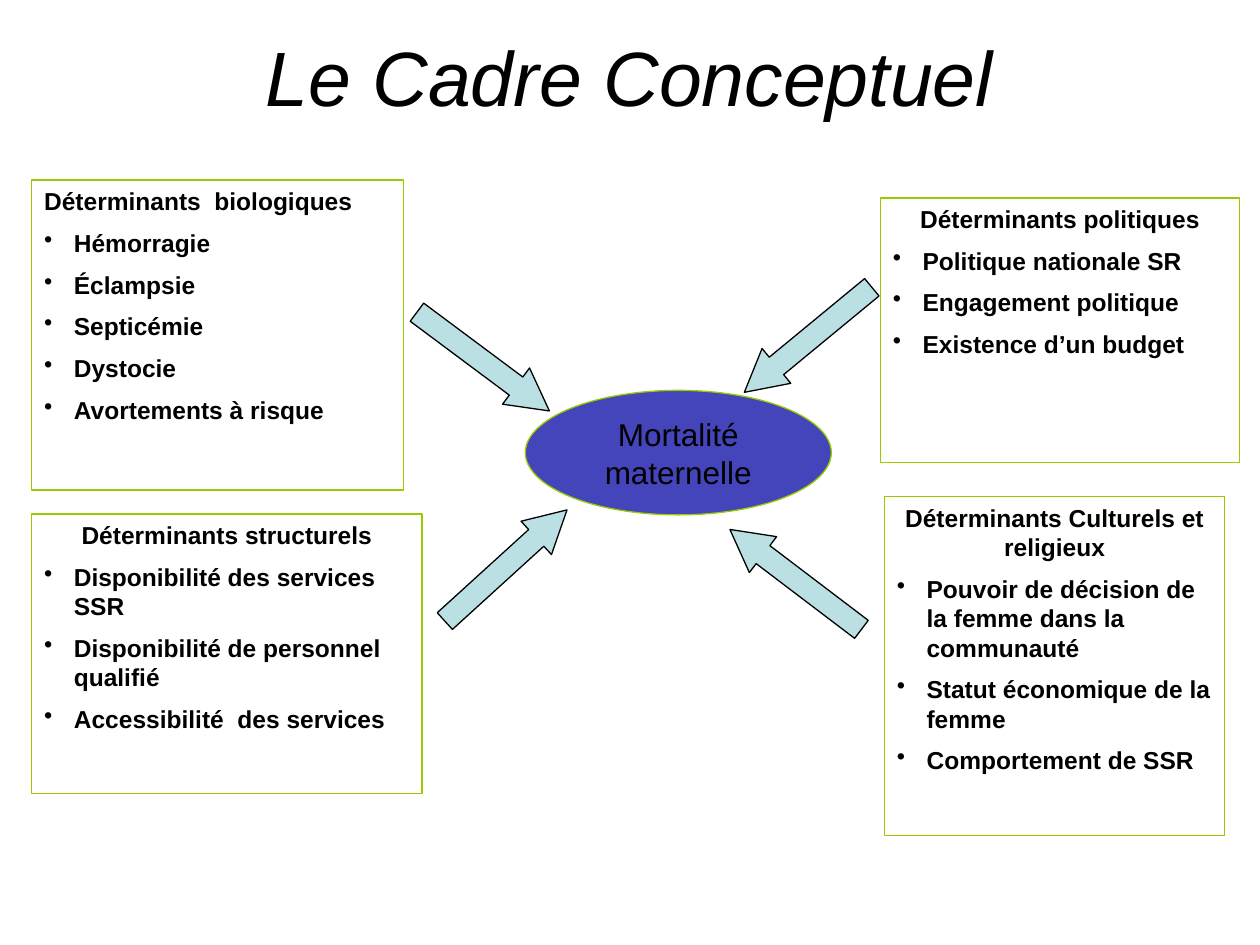
from pptx import Presentation
from pptx.dml.color import RGBColor as Rgb
from pptx.enum.shapes import MSO_SHAPE as Kind
from pptx.enum.text import MSO_ANCHOR as Anchor, PP_ALIGN as Align
from pptx.oxml.xmlchemy import OxmlElement as Node
from pptx.util import Cm, Pt

TITLE = "Le Cadre Conceptuel"
HUB = "Mortalité maternelle"
CARDS = [
    ((17.75, 3.99, 7.24, 5.33), Align.CENTER, "Déterminants politiques",
     ["Politique nationale SR", "Engagement politique", "Existence d’un budget"]),
    ((17.83, 10.01, 6.86, 6.83), Align.CENTER, "Déterminants Culturels et religieux",
     ["Pouvoir de décision de la femme dans la communauté",
      "Statut économique de la femme", "Comportement de SSR"]),
    ((0.64, 10.36, 7.87, 5.64), Align.CENTER, "Déterminants structurels",
     ["Disponibilité des services SSR", "Disponibilité de personnel qualifié",
      "Accessibilité  des services"]),
    ((0.64, 3.63, 7.49, 6.25), Align.LEFT, "Déterminants  biologiques",
     ["Hémorragie", "Éclampsie", "Septicémie", "Dystocie", "Avortements à risque"]),
]
ARROWS = [(9.74, 7.29, 36.7), (16.29, 6.85, 140.5), (16.04, 11.68, 217.2), (10.2, 11.4, 317.7)]
LONG, THICK = 3.33, 0.91
INDENT = Cm(0.6)
GREEN, BLUE, PALE, BLACK = "99CC00", "4545BB", "BBE0E3", "000000"
HEAD = {"size": Pt(44), "italic": True}
BODY = {"size": Pt(14), "bold": True}
CORE = {"size": Pt(18)}


def tint(part, code):
    part.solid()
    part.fore_color.rgb = Rgb.from_string(code)


def draw(kind, box, line, fill=None):
    shape = slide.shapes.add_shape(kind, *map(Cm, box))
    shape.shadow.inherit = False
    tint(shape.line.fill, line)
    shape.line.width = Pt(0.75)
    if fill:
        tint(shape.fill, fill)
    else:
        shape.fill.background()
    return shape


def write(para, text, form, align=Align.LEFT):
    para.alignment = align
    run = para.add_run()
    run.text = text
    for key, val in {"name": "Arial", **form}.items():
        setattr(run.font, key, val)
    tint(run.font.fill, BLACK)


def dot(para):
    props = para._p.get_or_add_pPr()
    props.set("marL", str(INDENT))
    props.set("indent", str(-INDENT))
    mark = Node("a:buChar")
    mark.set("char", "•")
    props.append(mark)


def frame(shape, anchor):
    text = shape.text_frame
    text.word_wrap = True
    text.vertical_anchor = anchor
    return text


deck = Presentation()
deck.slide_width, deck.slide_height = Cm(25.4), Cm(19.05)
slide = deck.slides.add_slide(deck.slide_layouts[6])

title = slide.shapes.add_textbox(*map(Cm, (1.9, 0.53, 21.59, 1.98)))
write(frame(title, Anchor.MIDDLE).paragraphs[0], TITLE, HEAD, Align.CENTER)

for box, align, name, items in CARDS:
    text = frame(draw(Kind.RECTANGLE, box, GREEN), Anchor.TOP)
    write(text.paragraphs[0], name, BODY, align)
    for item in items:
        para = text.add_paragraph()
        para.space_before = Pt(7)
        dot(para)
        write(para, item, BODY)

hub = draw(Kind.OVAL, (10.59, 7.87, 6.17, 2.51), GREEN, BLUE)
write(frame(hub, Anchor.MIDDLE).paragraphs[0], HUB, CORE, Align.CENTER)

for x, y, turn in ARROWS:
    arrow = draw(Kind.RIGHT_ARROW, (x - LONG / 2, y - THICK / 2, LONG, THICK), BLACK, PALE)
    arrow.rotation = turn
    arrow.adjustments[1] = 0.92

deck.save("out.pptx")
